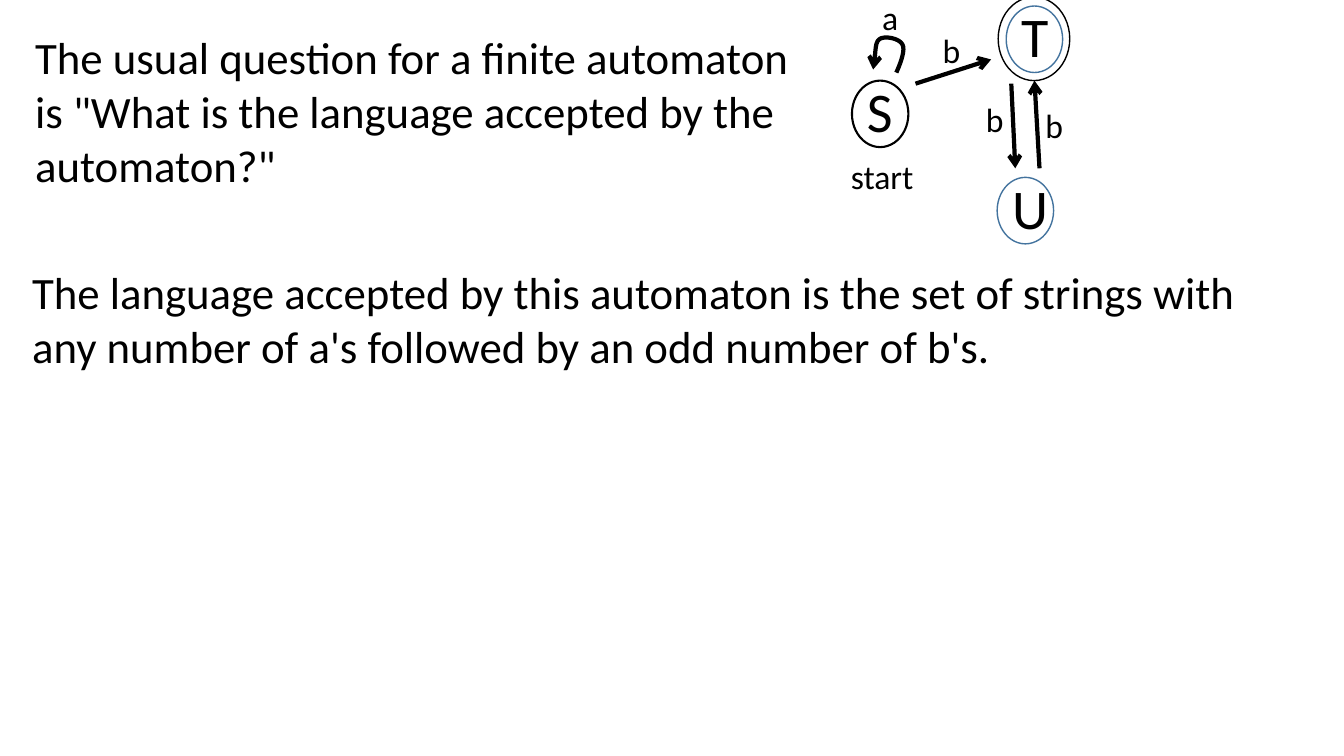
import lxml.etree
import pptx
import pptx.dml.color
import pptx.enum.shapes
import pptx.enum.text
import pptx.oxml.ns
import pptx.util

PX = 9144  # 100 px to the inch
FONT = "Calibri"
BLACK = "000000"
BLUE = "43739E"


def px(length):
    return pptx.util.Emu(round(length * PX))


def color(hex_text):
    return pptx.dml.color.RGBColor.from_string(hex_text)


def add_text(page, box, words, size, side_margin=10):
    frame = page.shapes.add_textbox(*map(px, box)).text_frame
    settings = {
        "word_wrap": True,
        "auto_size": pptx.enum.text.MSO_AUTO_SIZE.SHAPE_TO_FIT_TEXT,
        "margin_left": px(side_margin),
        "margin_right": px(side_margin),
    }
    for name, value in settings.items():
        setattr(frame, name, value)
    span = frame.paragraphs[0].add_run()
    span.text = words
    for name, value in {"name": FONT, "size": pptx.util.Pt(size)}.items():
        setattr(span.font, name, value)
    span.font.color.rgb = color(BLACK)


def add_ring(page, box, line_color, width):
    ring = page.shapes.add_shape(
        pptx.enum.shapes.MSO_SHAPE.OVAL, *map(px, box))
    ring.shadow.inherit = False
    ring.fill.background()
    ring.line.color.rgb = color(line_color)
    ring.line.width = pptx.util.Pt(width)


def style_arrow(arrow):
    """Give a line or open outline a thick stroke with an open head at its end."""
    arrow.line.color.rgb = color(BLACK)
    arrow.line.width = pptx.util.Pt(3)
    head = lxml.etree.SubElement(
        arrow.line._get_or_add_ln(), pptx.oxml.ns.qn("a:tailEnd"))
    head.set("type", "arrow")


def add_arrow(page, start, end):
    arrow = page.shapes.add_connector(
        pptx.enum.shapes.MSO_CONNECTOR.STRAIGHT, *map(px, start + end))
    style_arrow(arrow)
    lxml.etree.SubElement(
        arrow._element.spPr, pptx.oxml.ns.qn("a:effectLst"))


def curve_points(start, curves, steps=8):
    """Return points along a chain of cubic Bezier curves."""
    points = [start]
    for first, second, end in curves:
        for step in range(1, steps + 1):
            t = step / steps
            weights = ((1 - t) ** 3, 3 * t * (1 - t) ** 2,
                       3 * t ** 2 * (1 - t), t ** 3)
            corners = (start, first, second, end)
            points.append(tuple(
                sum(weight * corner[axis]
                    for weight, corner in zip(weights, corners))
                for axis in (0, 1)))
        start = end
    return points


def add_loop(page, left, top):
    curves = [
        ((28, 24), (32, 12), (29, 7)),
        ((26, 1), (11, -2), (6, 2)),
        ((1, 6), (3, 18), (0, 32)),
    ]
    points = [(px(left + x), px(top + y))
              for x, y in curve_points((23, 35), curves)]
    builder = page.shapes.build_freeform(*points[0])
    builder.add_line_segments(points[1:], close=False)
    loop = builder.convert_to_shape()
    loop.shadow.inherit = False
    loop.fill.background()
    style_arrow(loop)


def add_state(page, left, top, letter, line_color, width=1):
    add_ring(page, (left, top, 56, 66), line_color, width)
    add_text(page, (left + 5, top - 9, 28, 77), letter, 40)


def add_automaton(page, left, top):
    add_state(page, left + 11, top + 83, "S", BLACK, 1.5)
    add_state(page, left + 155, top + 179, "U", BLUE)
    add_state(page, left + 164, top + 9, "T", BLUE)
    add_ring(page, (left + 156, top, 71, 83), BLACK, 1)

    for start_x, start_y, end_x, end_y in [
        (74, 86, 149, 62),
        (169, 86, 173, 170),
        (197, 170, 192, 83),
    ]:
        add_arrow(page, (left + start_x, top + start_y),
                  (left + end_x, top + end_y))
    add_loop(page, left + 32, top + 40)

    add_text(page, (left, top + 153, 106, 50), "start", 24)
    add_text(page, (left + 41, top - 5, 9, 50), "a", 24, side_margin=0)
    for x, y in [(91, 28), (134, 96), (193, 102)]:
        add_text(page, (left + x, top + y, 37, 50), "b", 24)


def main():
    deck = pptx.Presentation()
    deck.slide_width, deck.slide_height = px(1333), px(750)
    page = deck.slides.add_slide(deck.slide_layouts[6])
    add_automaton(page, 834, -3)
    add_text(page, (25, 25, 792, 172),
             'The usual question for a finite automaton is "What is the '
             'language accepted by the automaton?"', 32)
    add_text(page, (22, 258, 1283, 118),
             "The language accepted by this automaton is the set of strings "
             "with any number of a's followed by an odd number of b's.", 32)
    deck.save("out.pptx")


if __name__ == "__main__":
    main()
